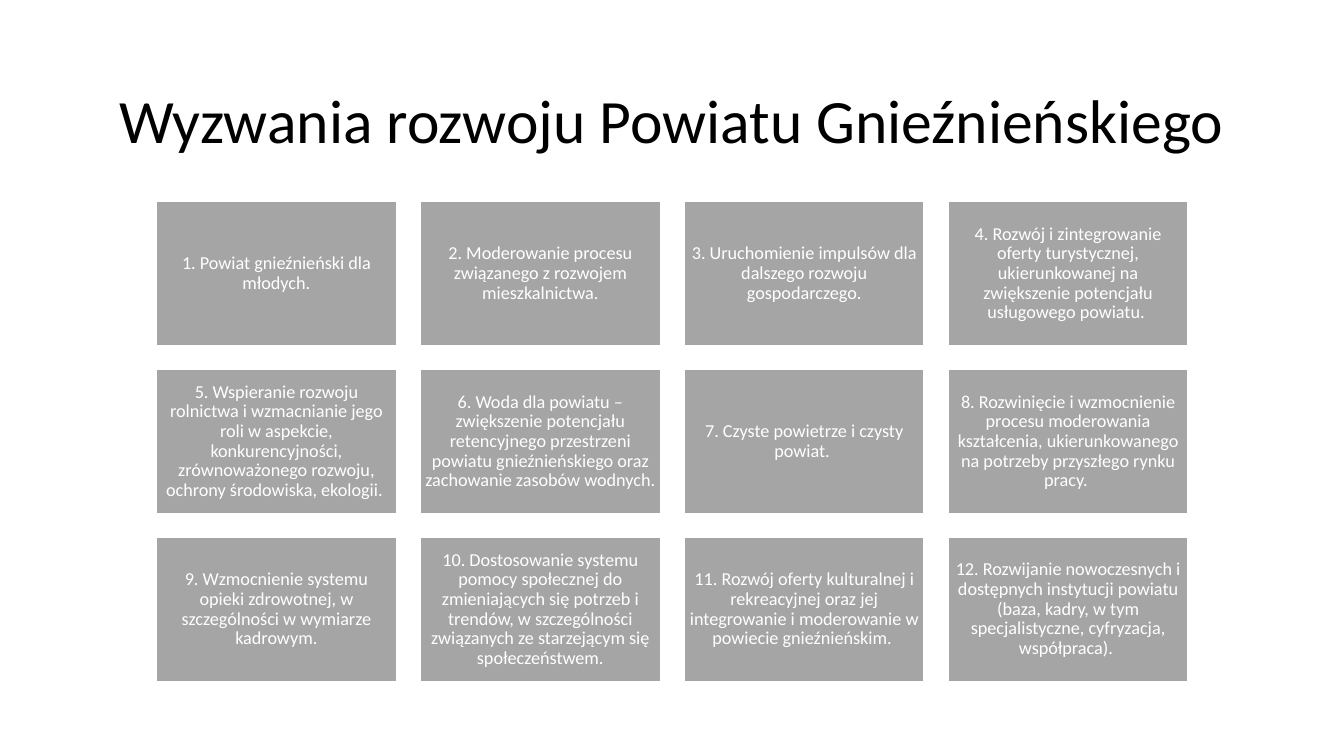
"""Build a slide with the twelve development challenges of the Gniezno county."""
from dataclasses import dataclass

from pptx import Presentation
from pptx.dml.color import RGBColor
from pptx.enum.shapes import MSO_SHAPE as SHAPE
from pptx.enum.text import MSO_ANCHOR as ANCHOR, PP_ALIGN as ALIGN
from pptx.util import Cm, Pt


@dataclass(frozen=True)
class Theme:
    font: str = "Calibri"
    title_size: int = 44
    card_size: int = 13
    title_color: RGBColor = RGBColor(0x00, 0x00, 0x00)
    card_fill: RGBColor = RGBColor(0xA5, 0xA5, 0xA5)
    white: RGBColor = RGBColor(0xFF, 0xFF, 0xFF)


theme = Theme()


def write(tf, text, *, size, color, inset=None):
    tf.word_wrap = True
    tf.vertical_anchor = ANCHOR.MIDDLE
    if inset is not None:
        tf.margin_left = tf.margin_right = inset
        tf.margin_top = tf.margin_bottom = inset
    p = tf.paragraphs[0]
    p.alignment = ALIGN.CENTER
    p.line_spacing = 0.9
    r = p.add_run()
    r.text = text
    r.font.name = theme.font
    r.font.size = Pt(size)
    r.font.color.rgb = color


prs = Presentation()
prs.slide_width, prs.slide_height = Cm(33.87), Cm(19.05)
s = prs.slides.add_slide(prs.slide_layouts[6])

title = s.shapes.add_textbox(Cm(2.33), Cm(1.55), Cm(29.21), Cm(3.15))
write(title.text_frame, "Wyzwania rozwoju Powiatu Gnieźnieńskiego",
      size=theme.title_size, color=theme.title_color)

challenges = [
    "1. Powiat gnieźnieński dla młodych.",
    "2. Moderowanie procesu związanego z rozwojem mieszkalnictwa.",
    "3. Uruchomienie impulsów dla dalszego rozwoju gospodarczego.",
    "4. Rozwój i zintegrowanie oferty turystycznej, ukierunkowanej na "
    "zwiększenie potencjału usługowego powiatu. ",
    "5. Wspieranie rozwoju rolnictwa i wzmacnianie jego roli w aspekcie, "
    "konkurencyjności, zrównoważonego rozwoju, ochrony środowiska, ekologii. ",
    "6. Woda dla powiatu – zwiększenie potencjału retencyjnego przestrzeni "
    "powiatu gnieźnieńskiego oraz zachowanie zasobów wodnych.",
    "7. Czyste powietrze i czysty powiat. ",
    "8. Rozwinięcie i wzmocnienie procesu moderowania kształcenia, "
    "ukierunkowanego na potrzeby przyszłego rynku pracy. ",
    "9. Wzmocnienie systemu opieki zdrowotnej, w szczególności w wymiarze kadrowym.",
    "10. Dostosowanie systemu pomocy społecznej do zmieniających się potrzeb "
    "i trendów, w szczególności związanych ze starzejącym się społeczeństwem.",
    "11. Rozwój oferty kulturalnej i rekreacyjnej oraz jej integrowanie "
    "i moderowanie w powiecie gnieźnieńskim. ",
    "12. Rozwijanie nowoczesnych i dostępnych instytucji powiatu (baza, kadry, "
    "w tym specjalistyczne, cyfryzacja, współpraca). ",
]

columns = 4
left, top = 3.94, 5.08
width, height = 6.05, 3.63
gap = 0.6

for i, text in enumerate(challenges):
    row, col = divmod(i, columns)
    card = s.shapes.add_shape(
        SHAPE.RECTANGLE,
        Cm(left + col * (width + gap)), Cm(top + row * (height + gap)),
        Cm(width), Cm(height))
    card.shadow.inherit = False
    card.fill.solid()
    card.fill.fore_color.rgb = theme.card_fill
    card.line.color.rgb = theme.white
    card.line.width = Pt(1)
    write(card.text_frame, text, size=theme.card_size, color=theme.white,
          inset=Cm(0.13))

prs.save("out.pptx")
